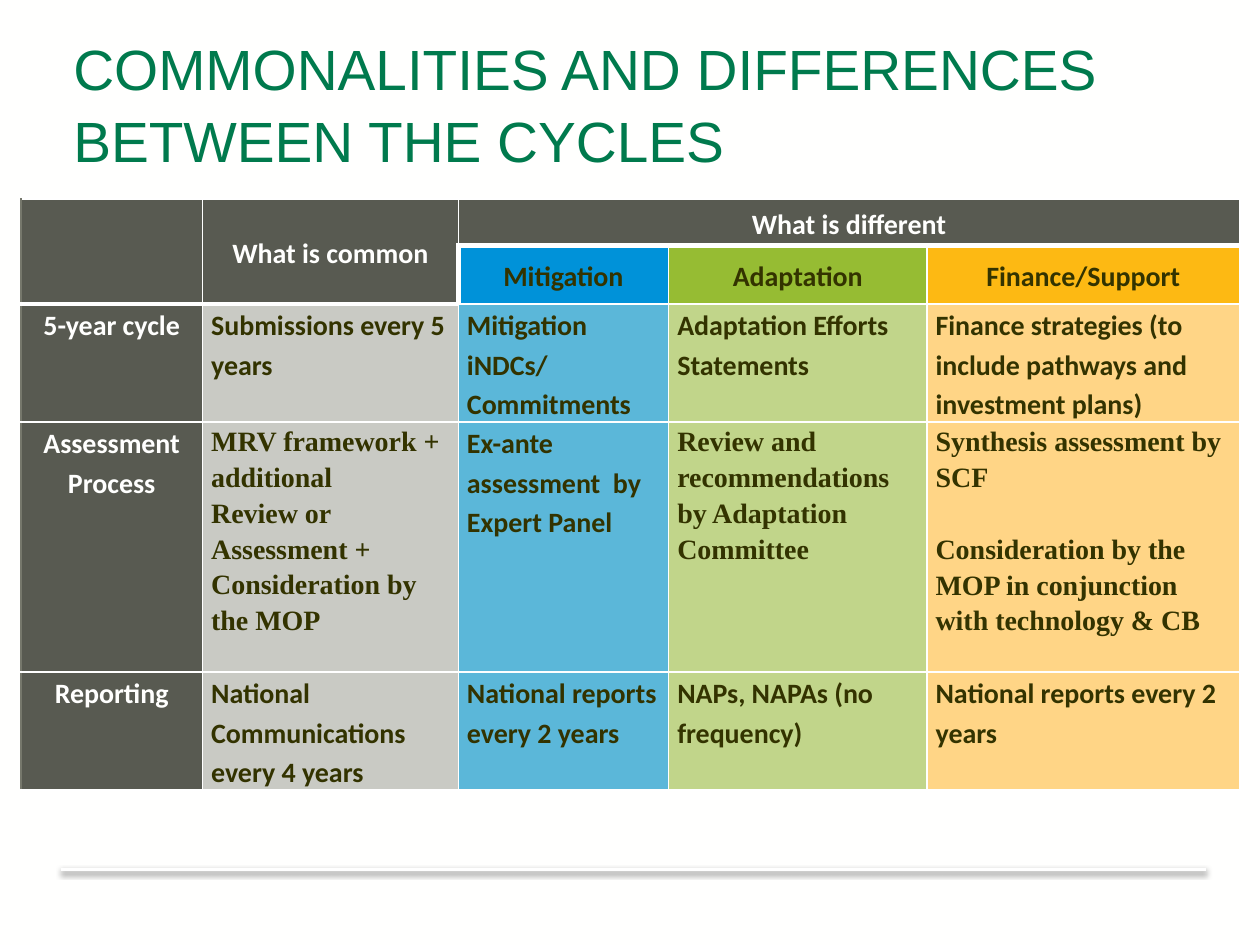
"""Build the slide comparing the commonalities and differences between the cycles."""
from lxml import etree
from pptx import Presentation, util as u
from pptx.dml.color import RGBColor
from pptx.enum import shapes, text
from pptx.oxml import ns

PAPER = RGBColor(0xFF, 0xFF, 0xFE)
WHITE = RGBColor(0xFF, 0xFF, 0xFF)
BLACK = RGBColor(0, 0, 0)
GREEN = RGBColor(0x00, 0x7A, 0x4D)
INK = RGBColor(0x33, 0x33, 0x00)
DARK = RGBColor(0x58, 0x5A, 0x51)
EDGE = RGBColor(0x76, 0x78, 0x6C)
BLUE = RGBColor(0x00, 0x92, 0xD9)
LIME = RGBColor(0x96, 0xBC, 0x33)
GOLD = RGBColor(0xFD, 0xB9, 0x13)
PALE_GREY = RGBColor(0xC9, 0xCA, 0xC4)
PALE_BLUE = RGBColor(0x5B, 0xB7, 0xD9)
PALE_LIME = RGBColor(0xC1, 0xD5, 0x8A)
PALE_GOLD = RGBColor(0xFF, 0xD5, 0x86)

SANS, SERIF = "Calibri", "Times New Roman"
COLUMNS = [103.7, 146.2, 120.2, 147.6, 178.8]
ROWS = [26.5, 33.5, 67.5, 142.8, 67.5]
BODY_FILLS = [DARK, PALE_GREY, PALE_BLUE, PALE_LIME, PALE_GOLD]
HEADINGS = [
    (0, 1, "What is common", DARK, PAPER),
    (0, 2, "What is different", DARK, PAPER),
    (1, 2, "Mitigation", BLUE, INK),
    (1, 3, "Adaptation", LIME, INK),
    (1, 4, "Finance/Support", GOLD, INK),
]
BODY = [
    ["5-year cycle", "Submissions every 5 years", "Mitigation iNDCs/ Commitments",
     "Adaptation Efforts Statements",
     "Finance strategies (to include pathways and investment plans)"],
    ["Assessment Process",
     "MRV framework + additional\nReview or Assessment +\nConsideration by the MOP",
     "Ex-ante assessment  by Expert Panel",
     "Review and recommendations by Adaptation Committee",
     "Synthesis assessment by SCF\n"
     "Consideration by the MOP in conjunction with technology & CB"],
    ["Reporting", "National Communications every 4 years",
     "National reports every 2 years", "NAPs, NAPAs (no frequency)",
     "National reports every 2 years"],
]
SERIF_CELLS = {(3, 1), (3, 3), (3, 4)}


def write(frame, words, font=SANS, size=16, color=INK, bold=True,
          align=text.PP_ALIGN.LEFT, spacing=1.15, gap=0):
    """Fill a text frame, one paragraph per line of words."""
    for number, line in enumerate(words.split("\n")):
        para = frame.paragraphs[0] if number == 0 else frame.add_paragraph()
        para.alignment, para.line_spacing = align, spacing
        para.space_before = u.Pt(gap if number else 0)
        span = para.add_run()
        span.text = line
        span.font.name, span.font.size, span.font.bold = font, u.Pt(size), bold
        span.font.color.rgb = color


class Builder:
    """Hold the current page and draw each kind of element on it."""

    def __init__(self, page):
        self.page = page
        page.background.fill.solid()
        page.background.fill.fore_color.rgb = PAPER

    def title(self, words, left, top, width, height):
        box = self.page.shapes.add_textbox(*map(u.Pt, (left, top, width, height)))
        box.text_frame.word_wrap = True
        write(box.text_frame, words, font="Arial", size=32.4, color=GREEN,
              bold=False, spacing=1.05)

    def rule(self, left, right, top):
        line = self.page.shapes.add_connector(
            shapes.MSO_CONNECTOR.STRAIGHT, *map(u.Pt, (left, top, right, top)))
        line.line.color.rgb, line.line.width = WHITE, u.Pt(2)
        effects = etree.SubElement(line._element.spPr, ns.qn("a:effectLst"))
        shadow = etree.SubElement(
            effects, ns.qn("a:outerShdw"), blurRad=str(u.Pt(3.1)),
            dist=str(u.Pt(1.6)), dir="5400000", rotWithShape="0")
        color = etree.SubElement(shadow, ns.qn("a:srgbClr"), val=str(BLACK))
        etree.SubElement(color, ns.qn("a:alpha"), val="38000")

    def table(self, left, top, columns, rows):
        frame = self.page.shapes.add_table(
            len(rows), len(columns),
            *map(u.Pt, (left, top, sum(columns), sum(rows))))
        table = frame.table
        table.first_row = table.horz_banding = False
        for column, width in zip(table.columns, columns):
            column.width = u.Pt(width)
        for row, height in zip(table.rows, rows):
            row.height = u.Pt(height)
        return table

    def cell(self, cell, fill, borders):
        cell.margin_left = cell.margin_right = u.Pt(5)
        cell.margin_top = cell.margin_bottom = 0
        for side, (color, width) in borders.items():
            line = etree.SubElement(cell._tc.get_or_add_tcPr(),
                                    ns.qn(f"a:ln{side}"), w=str(u.Pt(width)))
            solid = etree.SubElement(line, ns.qn("a:solidFill"))
            etree.SubElement(solid, ns.qn("a:srgbClr"), val=str(color))
        cell.fill.solid()
        cell.fill.fore_color.rgb = fill


def cell_borders(row, column):
    """Give the thick rules under the headings and thin ones elsewhere."""
    head_end = 1 if column < 2 else 0
    return {
        "L": (EDGE, 1) if column == 0 else (WHITE, 3 if (row, column) == (1, 2) else 1),
        "R": (WHITE, 1),
        "T": (WHITE, 3 if row == head_end + 1 else 1),
        "B": (WHITE, 3 if row <= head_end else 1),
    }


def main():
    deck = Presentation()
    deck.slide_width, deck.slide_height = u.Pt(720), u.Pt(540)
    builder = Builder(deck.slides.add_slide(deck.slide_layouts[6]))
    builder.title("COMMONALITIES AND DIFFERENCES BETWEEN THE CYCLES",
                  34.8, 14, 612, 82)
    builder.rule(34.8, 689, 496.8)

    table = builder.table(12, 113.8, COLUMNS, ROWS)
    heading_fills = {(row, column): fill for row, column, _, fill, _ in HEADINGS}
    for row in range(len(ROWS)):
        for column in range(len(COLUMNS)):
            fill = heading_fills.get((row, column), DARK) if row < 2 else BODY_FILLS[column]
            builder.cell(table.cell(row, column), fill, cell_borders(row, column))
    for column in (0, 1):
        table.cell(0, column).merge(table.cell(1, column))
    table.cell(0, 2).merge(table.cell(0, 4))

    for row, column, words, _, color in HEADINGS:
        cell = table.cell(row, column)
        cell.vertical_anchor = text.MSO_ANCHOR.MIDDLE
        write(cell.text_frame, words, color=color, align=text.PP_ALIGN.CENTER)
    for row, entries in enumerate(BODY, start=2):
        for column, words in enumerate(entries):
            label = column == 0
            write(table.cell(row, column).text_frame, words,
                  font=SERIF if (row, column) in SERIF_CELLS else SANS,
                  color=PAPER if label else INK,
                  align=text.PP_ALIGN.CENTER if label else text.PP_ALIGN.LEFT,
                  gap=20.5 if column == 4 else 0)
    deck.save("out.pptx")


if __name__ == "__main__":
    main()
